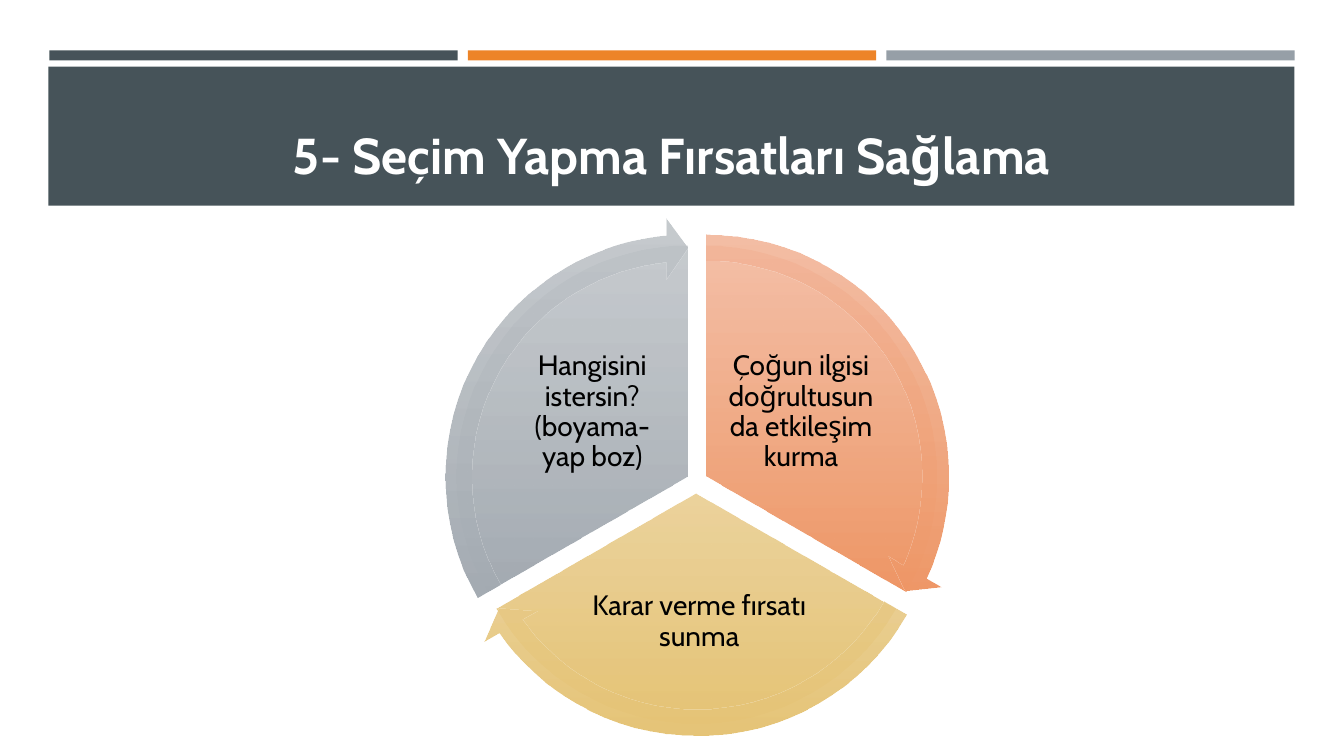
from dataclasses import dataclass

from lxml.etree import SubElement
from pptx import Presentation
from pptx.dml.color import RGBColor
from pptx.enum.shapes import MSO_SHAPE as Preset
from pptx.enum.text import MSO_ANCHOR as Anchor, MSO_AUTO_SIZE as AutoSize, PP_ALIGN as Align
from pptx.oxml.ns import qn
from pptx.shapes.autoshape import Shape
from pptx.text.text import TextFrame
from pptx.util import Pt

EMU_PER_PX = 9144  # 100 px to the inch
PIE_SIZE = 457
ARROW_MARGIN = 28
ARROW_SIZE = 514
ARROW_THICKNESS = 0.051
ARROW_HEAD_ANGLE = 3.275
ARROW_HEAD_WIDTH = 0.059
INSET = 3
START_ALPHA = 90


@dataclass(frozen=True)
class Theme:
    font: str = "Cabin"
    slate: str = "465359"
    orange: str = "ED8428"
    grey: str = "969FA7"
    title_color: str = "FFFFFF"
    text_color: str = "000000"
    coral: tuple[str, str] = ("F3B89D", "ED8C53")
    sand: tuple[str, str] = ("EED9AE", "E6C476")
    silver: tuple[str, str] = ("C0C5C9", "9BA3AB")
    title_size: int = 36
    text_size: int = 20


@dataclass(frozen=True)
class Box:
    left: int
    top: int
    width: int
    height: int

    def emu(self) -> tuple[int, int, int, int]:
        return px(self.left), px(self.top), px(self.width), px(self.height)


@dataclass(frozen=True)
class Bar:
    box: Box
    color: str


@dataclass(frozen=True)
class Sector:
    """One third of the wheel; angles are in units of 100000/60000 degree."""
    left: int
    top: int
    start: float
    end: float
    gradient: tuple[str, str]
    text: str
    text_box: Box


THEME = Theme()
BARS = [
    Bar(Box(49 + 415 * column, 50, 405, 10), color)
    for column, color in enumerate((THEME.slate, THEME.orange, THEME.grey))
] + [Bar(Box(48, 66, 1236, 138), THEME.slate)]
TITLE = "5- Seçim Yapma Fırsatları Sağlama"
TITLE_BOX = Box(63, 80, 1206, 108)
SECTORS = [
    Sector(472, 244, 162, 18, THEME.coral,
           "Çoğun ilgisi doğrultusunda etkileşim kurma", Box(713, 341, 163, 136)),
    Sector(462, 261, 18, 90, THEME.sand,
           "Karar verme fırsatı sunma", Box(571, 557, 245, 120)),
    Sector(453, 244, 90, 162, THEME.silver,
           "Hangisini istersin? (boyama-yap boz)", Box(506, 341, 163, 136)),
]


def px(length: int) -> int:
    return length * EMU_PER_PX


def add_plain_shape(page, preset: Preset, box: Box) -> Shape:
    shape = page.shapes.add_shape(preset, *box.emu())
    shape.shadow.inherit = False
    shape.line.fill.background()
    return shape


def add_bar(page, bar: Bar) -> None:
    shape = add_plain_shape(page, Preset.RECTANGLE, bar.box)
    shape.fill.solid()
    shape.fill.fore_color.rgb = RGBColor.from_string(bar.color)


def fill_gradient(shape: Shape, colors: tuple[str, str]) -> None:
    """Fill from top to bottom, slightly transparent at the top."""
    shape.fill.gradient()
    shape.fill.gradient_angle = 270
    for position, (stop, color) in enumerate(zip(shape.fill.gradient_stops, colors)):
        stop.position = position
        stop.color.rgb = RGBColor.from_string(color)
    first_color = next(shape._element.spPr.iter(qn("a:srgbClr")))
    SubElement(first_color, qn("a:alpha"), val=str(START_ALPHA * 1000))


def add_gradient_shape(page, preset: Preset, box: Box, angles: list[float],
                       colors: tuple[str, str]) -> None:
    shape = add_plain_shape(page, preset, box)
    for index, value in enumerate(angles):
        shape.adjustments[index] = value
    fill_gradient(shape, colors)


def write_text(frame: TextFrame, text: str, size: int, color: str, bold: bool = False) -> None:
    frame.word_wrap = True
    frame.auto_size = AutoSize.NONE
    para = frame.paragraphs[0]
    para.text = text
    para.alignment = Align.CENTER
    para.font.name = THEME.font
    para.font.size = Pt(size)
    para.font.bold = bold
    para.font.color.rgb = RGBColor.from_string(color)


def add_title(page) -> None:
    title = page.shapes.title
    title.left, title.top, title.width, title.height = TITLE_BOX.emu()
    write_text(title.text_frame, TITLE, THEME.title_size, THEME.title_color, bold=True)
    title.text_frame.vertical_anchor = Anchor.BOTTOM
    page.shapes._spTree.append(title._element)  # in front of the band


def add_sector(page, sector: Sector) -> None:
    add_gradient_shape(page, Preset.PIE, Box(sector.left, sector.top, PIE_SIZE, PIE_SIZE),
                       [sector.start, sector.end], sector.gradient)
    frame = page.shapes.add_textbox(*sector.text_box.emu()).text_frame
    frame.margin_left = frame.margin_right = px(INSET)
    frame.margin_top = frame.margin_bottom = px(INSET)
    frame.vertical_anchor = Anchor.MIDDLE
    write_text(frame, sector.text, THEME.text_size, THEME.text_color)
    frame.paragraphs[0].line_spacing = 0.9
    frame.paragraphs[0].space_after = Pt(7)


def add_sector_arrow(page, sector: Sector) -> None:
    box = Box(sector.left - ARROW_MARGIN, sector.top - ARROW_MARGIN, ARROW_SIZE, ARROW_SIZE)
    angles = [ARROW_THICKNESS, ARROW_HEAD_ANGLE, sector.end - ARROW_HEAD_ANGLE,
              sector.start, ARROW_HEAD_WIDTH]
    add_gradient_shape(page, Preset.CIRCULAR_ARROW, box, angles, sector.gradient)


def main() -> None:
    deck = Presentation()
    deck.slide_width, deck.slide_height = px(1333), px(750)
    page = deck.slides.add_slide(deck.slide_layouts[5])
    for bar in BARS:
        add_bar(page, bar)
    add_title(page)
    for sector in SECTORS:
        add_sector(page, sector)
    for sector in SECTORS:
        add_sector_arrow(page, sector)
    deck.save("out.pptx")


if __name__ == "__main__":
    main()
